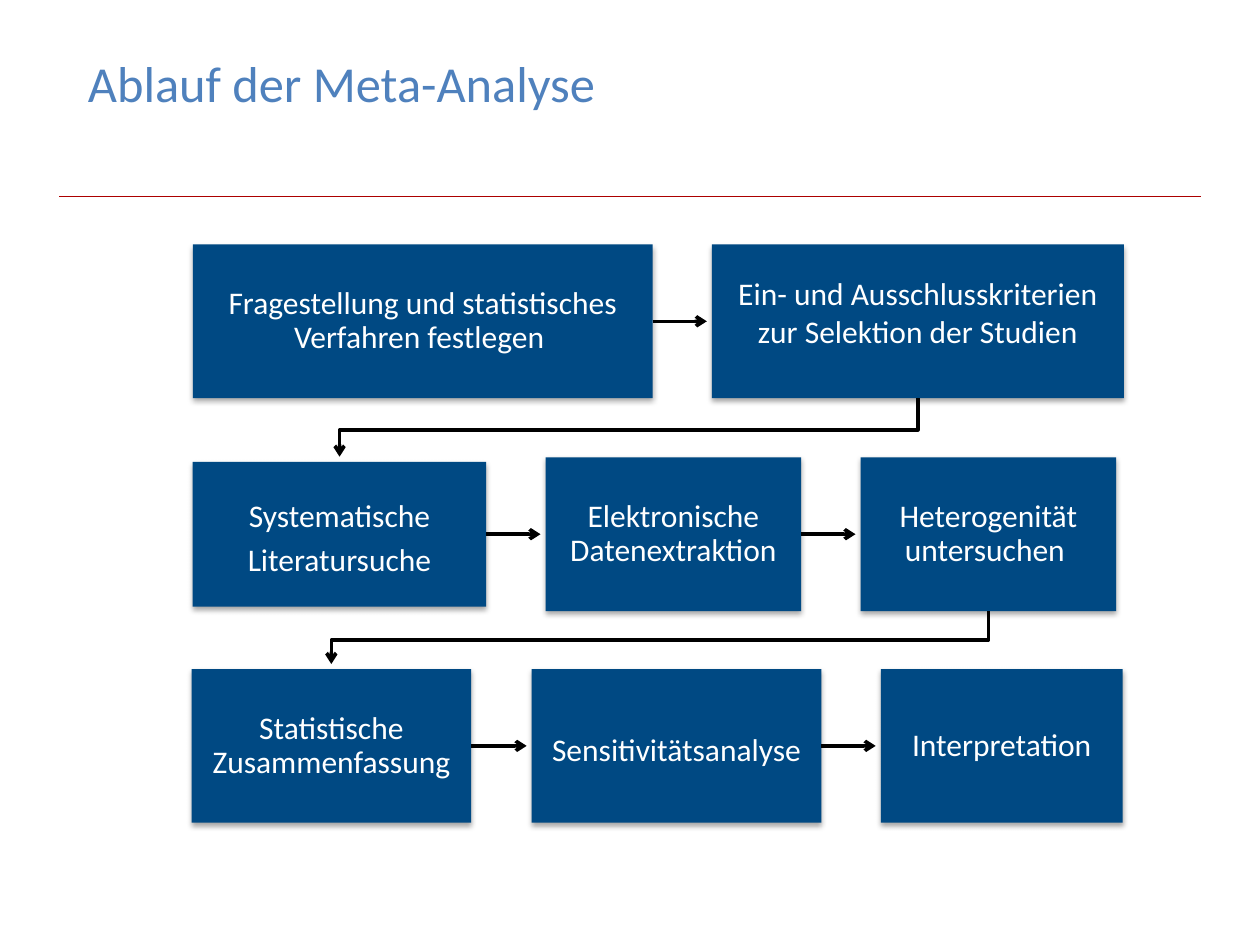
from lxml import etree
from pptx import Presentation
from pptx import util as u
from pptx.dml.color import RGBColor
from pptx.enum import shapes, text
from pptx.oxml.ns import qn

WIDTH, HEIGHT = 10, 7.5
FONT = "Calibri"
COLORS = {"title": "4F81BD", "rule": "AC0000", "box": "004983",
          "text": "FFFFFF", "arrow": "000000", "shadow": "000000"}

TITLE = "Ablauf der Meta-Analyse"
BOX_HEIGHT, PAD, ARROW_GAP = 1.22, 0.14, 0.04

# Each row: the vertical centre, then the steps as (text, left, width, options)
ROWS = [
    (2.55, [
        ("Fragestellung und statistisches Verfahren festlegen ", 1.53, 3.65, {}),
        ("Ein- und Ausschlusskriterien zur Selektion der Studien", 5.65, 3.27,
         {"spacing": 1.0, "bottom": 0.29}),
    ]),
    (4.24, [
        ("Systematische Literatursuche", 1.53, 2.33,
         {"spacing": u.Pt(25), "height": 1.15}),
        ("Elektronische Datenextraktion", 4.33, 2.03, {}),
        ("Heterogenität untersuchen ", 6.83, 2.03, {"pad": 0.09}),
    ]),
    (5.92, [
        ("Statistische Zusammenfassung", 1.52, 2.22, {}),
        ("Sensitivitätsanalyse", 4.22, 2.3, {"spacing": u.Pt(25)}),
        ("Interpretation", 6.99, 1.92, {}),
    ]),
]


def color(name):
    return RGBColor.from_string(COLORS[name])


def write(shape, words, *, size, tint, align, spacing=1.0, insets):
    """Put one paragraph into a shape; insets are left, top, right, bottom."""
    frame = shape.text_frame
    frame.word_wrap = True
    frame.vertical_anchor = text.MSO_ANCHOR.MIDDLE
    (frame.margin_left, frame.margin_top,
     frame.margin_right, frame.margin_bottom) = map(u.Inches, insets)
    para = frame.paragraphs[0]
    para.alignment = align
    para.line_spacing = spacing
    span = para.add_run()
    span.text = words
    span.font.name = FONT
    span.font.size = u.Pt(size)
    span.font.color.rgb = color(tint)


def add_shadow(shape):
    shape.shadow.inherit = False
    effects = shape._element.spPr.find(qn("a:effectLst"))
    outer = etree.SubElement(effects, qn("a:outerShdw"), blurRad="40000",
                             dist="23000", dir="5400000", rotWithShape="0")
    tone = etree.SubElement(outer, qn("a:srgbClr"), val=COLORS["shadow"])
    etree.SubElement(tone, qn("a:alpha"), val="35000")


def add_step(page, words, left, middle, width, *, height=BOX_HEIGHT,
             spacing=0.9, pad=PAD, bottom=None):
    box = page.shapes.add_shape(
        shapes.MSO_SHAPE.RECTANGLE,
        *map(u.Inches, (left, middle - height / 2, width, height)))
    box.fill.solid()
    box.fill.fore_color.rgb = color("box")
    box.line.fill.background()
    add_shadow(box)
    write(box, words, size=18, tint="text", align=text.PP_ALIGN.CENTER,
          spacing=spacing, insets=(pad, pad, pad, bottom or pad))
    return box


def add_line(page, start, end, tint, width):
    line = page.shapes.add_connector(shapes.MSO_CONNECTOR.STRAIGHT, *start, *end)
    etree.SubElement(line._element.spPr, qn("a:effectLst"))
    line.line.color.rgb = color(tint)
    line.line.width = u.Pt(width)
    return line


def add_arrowhead(shape):
    outline = shape._element.spPr.find(qn("a:ln"))
    etree.SubElement(outline, qn("a:tailEnd"), type="arrow")


def link_across(page, source, target):
    y = source.top + source.height // 2
    end = target.left - u.Inches(ARROW_GAP)
    add_arrowhead(add_line(page, (source.left + source.width, y), (end, y),
                           "arrow", 2))


def link_down(page, source, target):
    """Lead from the end of one row to the start of the next."""
    x1, x2 = (box.left + box.width // 2 for box in (source, target))
    top = source.top + source.height
    turn = (top + target.top) // 2
    builder = page.shapes.build_freeform(x1, top)
    builder.add_line_segments(
        [(x1, turn), (x2, turn), (x2, target.top - u.Inches(ARROW_GAP))],
        close=False)
    path = builder.convert_to_shape()
    path.fill.background()
    path.line.color.rgb = color("arrow")
    path.line.width = u.Pt(2)
    path.shadow.inherit = False
    add_arrowhead(path)


def main():
    deck = Presentation()
    deck.slide_width, deck.slide_height = u.Inches(WIDTH), u.Inches(HEIGHT)
    page = deck.slides.add_slide(deck.slide_layouts[6])

    rule_y, margin = u.Inches(1.56), 0.47
    add_line(page, (u.Inches(margin), rule_y),
             (u.Inches(WIDTH - margin), rule_y), "rule", 0.25)
    title = page.shapes.add_textbox(*map(u.Inches, (0.6, 0.34, 9.03, 0.62)))
    write(title, TITLE, size=28.8, tint="title", align=text.PP_ALIGN.LEFT,
          insets=(0.1, 0.05, 0.1, 0.05))

    previous = None
    for middle, steps in ROWS:
        boxes = [add_step(page, words, left, middle, width, **options)
                 for words, left, width, options in steps]
        for source, target in zip(boxes, boxes[1:]):
            link_across(page, source, target)
        if previous:
            link_down(page, previous, boxes[0])
        previous = boxes[-1]

    deck.save("out.pptx")


if __name__ == "__main__":
    main()
